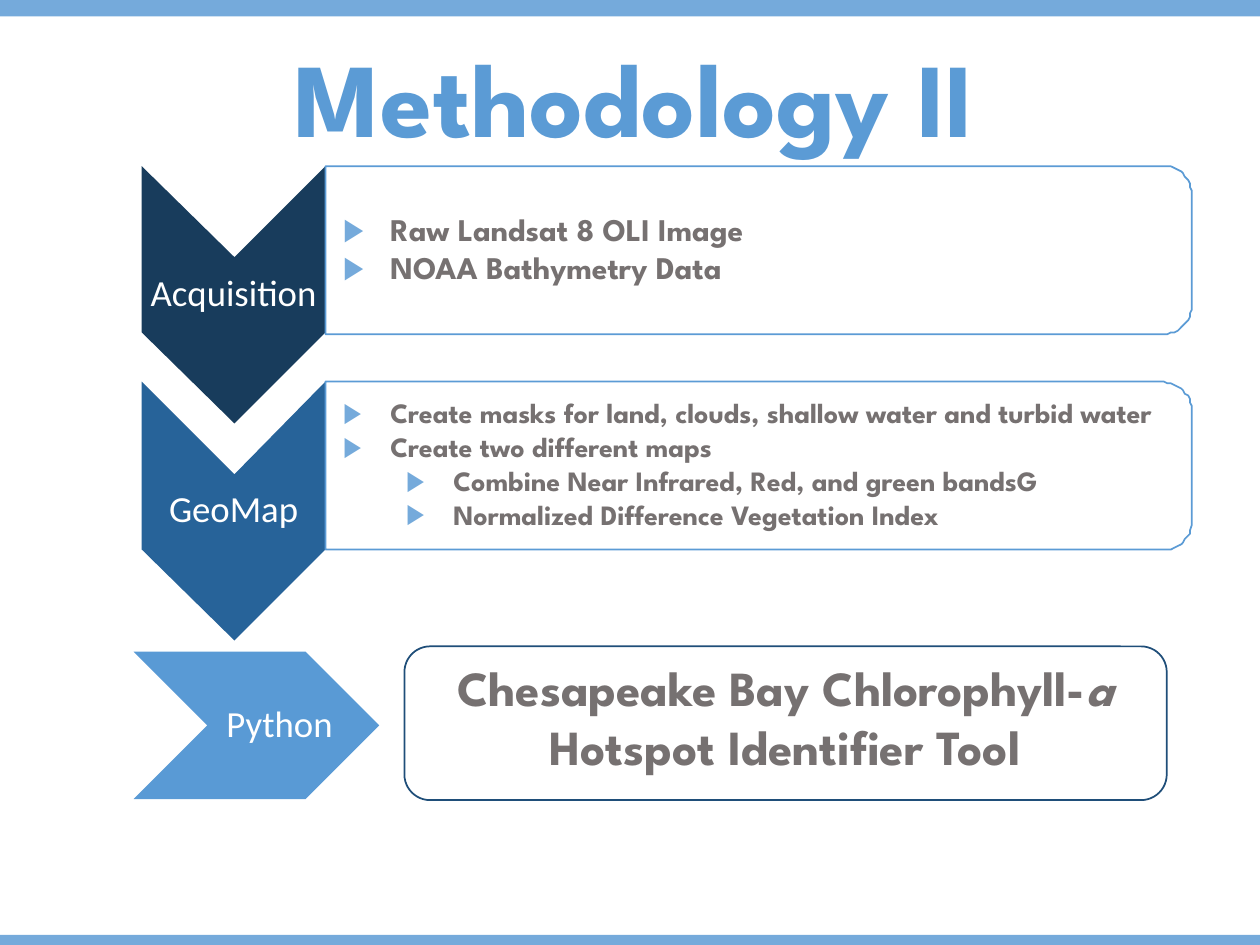
import math
from dataclasses import dataclass

from lxml import etree
from pptx import Presentation
from pptx.dml.color import RGBColor
from pptx.enum.shapes import MSO_SHAPE
from pptx.enum.text import MSO_ANCHOR, PP_ALIGN
from pptx.oxml.ns import qn
from pptx.util import Pt

RECT, CHEVRON, ROUNDED = MSO_SHAPE.RECTANGLE, MSO_SHAPE.CHEVRON, MSO_SHAPE.ROUNDED_RECTANGLE
CENTER, LEFT = PP_ALIGN.CENTER, PP_ALIGN.LEFT
TOP, MIDDLE = MSO_ANCHOR.TOP, MSO_ANCHOR.MIDDLE


@dataclass(frozen=True)
class Theme:
    band: str = "75AADB"
    accent: str = "5B9BD5"
    python_fill: str = "599AD5"
    tool_line: str = "1F4E79"
    body: str = "767171"
    white: str = "FFFFFF"
    heading_font: str = "League Spartan"
    label_font: str = "Calibri"
    title_size: float = 60
    tool_size: float = 28
    label_size: float = 21


THEME = Theme()
SLIDE_W, SLIDE_H = 720, 540
STAGE_PITCH = 123.6
STAGES = [
    ("Acquisition", "183C5C", 18, [
        (0, "Raw Landsat 8 OLI Image"),
        (0, "NOAA Bathymetry Data"),
    ]),
    ("GeoMap", "276399", 16, [
        (0, "Create masks for land, clouds, shallow water and turbid water"),
        (0, "Create two different maps"),
        (1, "Combine Near Infrared, Red, and green bandsG"),
        (1, "Normalized Difference Vegetation Index"),
    ]),
]


def paint(shape, fill=None, line=None):
    shape.shadow.inherit = False
    if fill:
        shape.fill.solid()
        shape.fill.fore_color.rgb = RGBColor.from_string(fill)
    else:
        shape.fill.background()
    if line:
        shape.line.color.rgb = RGBColor.from_string(line)
        shape.line.width = Pt(1)
    else:
        shape.line.fill.background()


def set_frame(shape, insets, anchor):
    frame = shape.text_frame
    frame.word_wrap = True
    frame.vertical_anchor = anchor
    (frame.margin_left, frame.margin_top,
     frame.margin_right, frame.margin_bottom) = map(Pt, insets)
    return frame


def style(paragraph, size, font, color, bold=False, align=LEFT, spacing=None):
    paragraph.alignment = align
    paragraph.line_spacing = spacing
    for run in paragraph.runs:
        run.font.size, run.font.name, run.font.bold = Pt(size), font, bold
        run.font.color.rgb = RGBColor.from_string(color)


def add_bullet(paragraph, level):
    paragraph.level = level
    props = paragraph._p.get_or_add_pPr()
    props.set("marL", str(Pt(27 + 36 * level)))
    props.set("indent", str(Pt(-27)))
    color = etree.SubElement(props, qn("a:buClr"))
    etree.SubElement(color, qn("a:srgbClr"), val=THEME.band)
    etree.SubElement(props, qn("a:buFont"), typeface="Arial")
    etree.SubElement(props, qn("a:buChar"), char="▶")


def add_outline(slide, points):
    builder = slide.shapes.build_freeform(*points[0], scale=Pt(1))
    builder.add_line_segments(points[1:], close=True)
    return builder.convert_to_shape()


def add_text(slide, box, text):
    label = slide.shapes.add_textbox(*map(Pt, box))
    frame = set_frame(label, (7.2, 3.6, 7.2, 3.6), TOP)
    frame.text = text
    return frame.paragraphs[0]


def add_bands(slide):
    for top, height in ((0, 9.36), (534.24, 5.76)):
        band = slide.shapes.add_shape(RECT, 0, Pt(top), Pt(SLIDE_W), Pt(height))
        paint(band, THEME.band)


def add_title(slide, box):
    title = add_text(slide, box, "Methodology II")
    style(title, THEME.title_size, THEME.heading_font, THEME.accent, True, CENTER, 0.9)


def add_stage_arrow(slide, box, label, fill):
    left, top, width, height = box
    notch = width / 2
    right, middle, bottom = left + width, left + notch, top + height
    arrow = add_outline(slide, [
        (left, top), (middle, top + notch), (right, top),
        (right, bottom - notch), (middle, bottom), (left, bottom - notch)])
    paint(arrow, fill)
    frame = set_frame(arrow, (0.72, 50, 0.72, 50), MIDDLE)
    frame.text = label
    style(frame.paragraphs[0], THEME.label_size, THEME.label_font, THEME.white,
          align=CENTER, spacing=0.9)


def add_stage_panel(slide, box, steps, size):
    left, top, width, height = box
    right, bottom, radius = left + width, top + height, height / 6

    # Right-hand corners are rounded, left-hand ones are square
    def corner(center_y, start):
        angles = (math.radians(start + 7.5 * i) for i in range(13))
        return [(right - radius + radius * math.cos(a), center_y + radius * math.sin(a))
                for a in angles]

    panel = add_outline(slide, [(left, top), *corner(top + radius, -90),
                                *corner(bottom - radius, 0), (left, bottom)])
    paint(panel, THEME.white, THEME.accent)
    frame = set_frame(panel, (10, 5, 5, 5), MIDDLE)
    frame.text = "\n".join(text for _, text in steps)
    for i, (paragraph, (level, _)) in enumerate(zip(frame.paragraphs, steps)):
        add_bullet(paragraph, level)
        style(paragraph, size, THEME.heading_font, THEME.body, True, spacing=0.9)
        if i:
            paragraph.space_before = Pt(2)


def add_stage(slide, box, label, fill, size, steps):
    left, top, width, height = box
    arrow_w, panel_h = 104.4, 96
    add_stage_arrow(slide, (left, top, arrow_w, height), label, fill)
    add_stage_panel(slide, (left + arrow_w, top, width - arrow_w, panel_h), steps, size)


def add_tool(slide, box):
    left, top, width, height = box
    # Python chevron and its label
    chevron = slide.shapes.add_shape(CHEVRON, Pt(left), Pt(top + 3), Pt(140.4), Pt(84.24))
    paint(chevron, THEME.python_fill)
    label = add_text(slide, (left + 46, top + 27.5, 85, 32.4), "Python")
    style(label, THEME.label_size, THEME.label_font, THEME.white)

    # Resulting tool
    frame_left = left + 154.8
    outline = slide.shapes.add_shape(ROUNDED, Pt(frame_left), Pt(top),
                                     Pt(left + width - frame_left), Pt(height))
    paint(outline, line=THEME.tool_line)
    name = add_text(slide, (frame_left - 6.5, top + 3, 447.84, 74.88),
                    "Chesapeake Bay Chlorophyll-")
    variant = name.add_run()
    variant.text = "a "
    name.add_run().text = "Hotspot Identifier Tool"
    style(name, THEME.tool_size, THEME.heading_font, THEME.body, True, CENTER)
    variant.font.italic = True


def main():
    deck = Presentation()
    deck.slide_width, deck.slide_height = Pt(SLIDE_W), Pt(SLIDE_H)
    slide = deck.slides.add_slide(deck.slide_layouts[6])
    add_bands(slide)
    add_title(slide, (76.32, 23.04, 572.4, 113.76))
    for i, (label, fill, size, steps) in enumerate(STAGES):
        add_stage(slide, (81.36, 94.8 + i * STAGE_PITCH, 599.4, 147.6),
                  label, fill, size, steps)
    add_tool(slide, (76.32, 369.36, 590.4, 87.84))
    deck.save("out.pptx")


if __name__ == "__main__":
    main()
